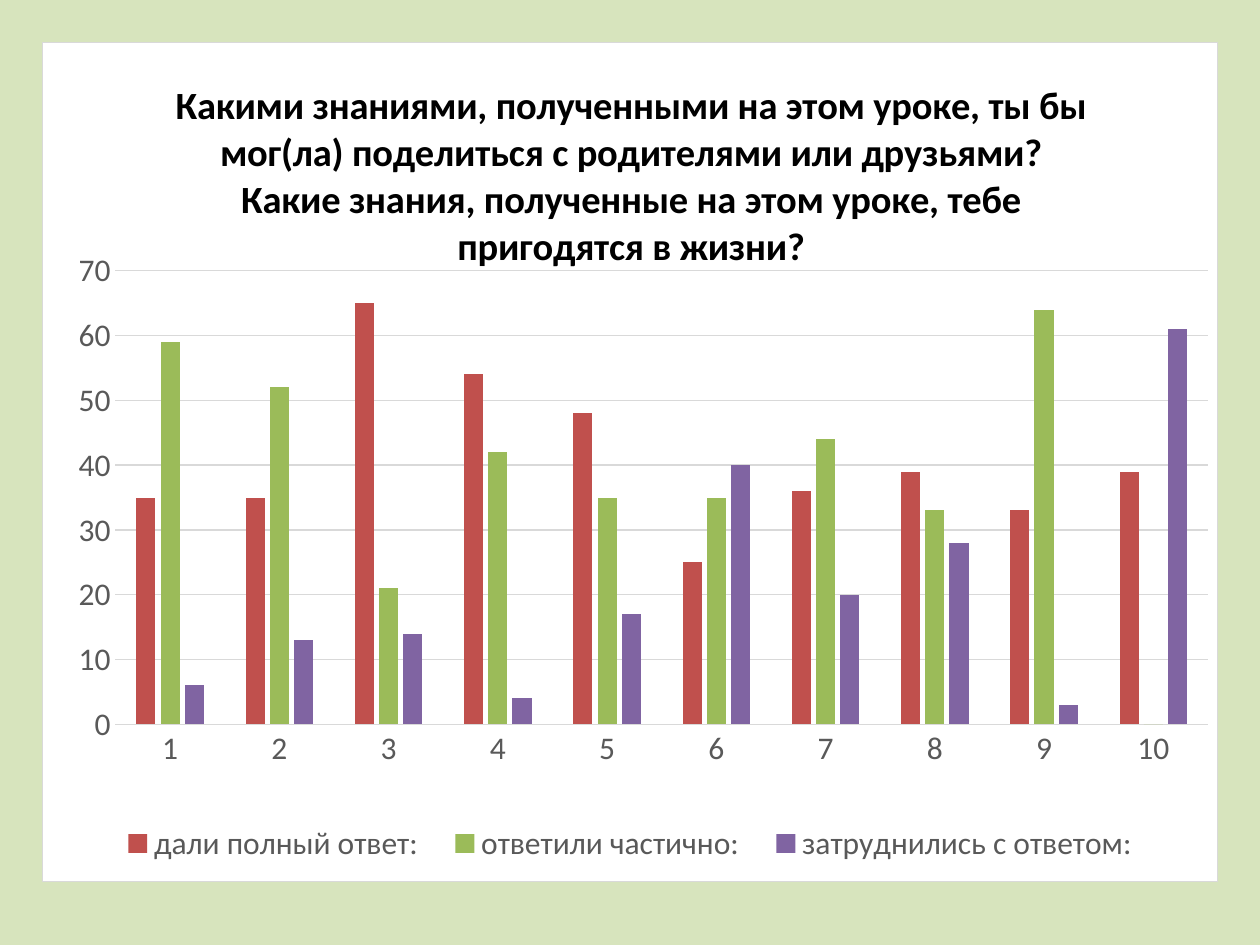
from lxml import etree
from pptx import Presentation
from pptx.chart.data import CategoryChartData
from pptx.dml.color import RGBColor as RGB
from pptx.enum.chart import XL_CHART_TYPE as CT, XL_LEGEND_POSITION as LP
from pptx.enum.chart import XL_TICK_MARK as Tick
from pptx.oxml import parse_xml
from pptx.oxml.ns import nsdecls, qn
from pptx.util import Pt

COLORS = {"bg": "D7E4BD", "panel": "FFFFFF", "rule": "D9D9D9",
          "label": "595959", "title": "000000"}
TITLE = [
    "Какими знаниями, полученными на этом уроке, ты бы мог(ла) "
    "поделиться с родителями или друзьями?",
    "Какие знания, полученные на этом уроке, тебе пригодятся в жизни?",
]
SERIES = [
    ("дали полный ответ:", "C0504D", (35, 35, 65, 54, 48, 25, 36, 39, 33, 39)),
    ("ответили частично:", "9BBB59", (59, 52, 21, 42, 35, 35, 44, 33, 64, 0)),
    ("затруднились с ответом:", "8064A2", (6, 13, 14, 4, 17, 40, 20, 28, 3, 61)),
]


def set_font(font, color, size, bold=False):
    for name, value in {"name": "Calibri", "size": Pt(size), "bold": bold}.items():
        setattr(font, name, value)
    font.color.rgb = RGB.from_string(COLORS[color])


def set_line(line):
    line.color.rgb = RGB.from_string(COLORS["rule"])
    line.width = Pt(0.75)


def set_layout(element, index, inner=False, **fractions):
    """Place a chart part by fractions of the chart box."""
    for old in element.findall(qn("c:layout")):
        element.remove(old)
    layout = parse_xml(f"<c:layout {nsdecls('c')}><c:manualLayout/></c:layout>")
    values = {"layoutTarget": "inner"} if inner else {}
    values.update(xMode="edge", yMode="edge", **fractions)
    for tag, value in values.items():
        etree.SubElement(layout[0], qn(f"c:{tag}")).set("val", str(value))
    element.insert(index, layout)


def style_title(chart):
    tf = chart.chart_title.text_frame
    for i, text in enumerate(TITLE):
        p = tf.paragraphs[0] if i == 0 else tf.add_paragraph()
        r = p.add_run()
        r.text = text
        set_font(r.font, "title", 22, True)
    chart.chart_title.include_in_layout = False
    set_layout(chart.chart_title._element, 1, x=0.11, y=0.04)


def style_axes(chart):
    for axis in (chart.category_axis, chart.value_axis):
        axis.major_tick_mark = axis.minor_tick_mark = Tick.NONE
        set_font(axis.tick_labels.font, "label", 18)
    set_line(chart.category_axis.format.line)
    value = chart.value_axis
    value.minimum_scale, value.maximum_scale, value.major_unit = 0, 70, 10
    value.format.line.fill.background()
    set_line(value.major_gridlines.format.line)


def style_legend(chart):
    chart.has_legend = True
    legend = chart.legend
    legend.position = LP.RIGHT
    legend.include_in_layout = False
    set_font(legend.font, "label", 18)
    set_layout(legend._element, 1, x=0.05, y=0.92, w=0.9, h=0.07)


def style_panel(chart):
    sp_pr = parse_xml(
        f'<c:spPr {nsdecls("c", "a")}>'
        f'<a:solidFill><a:srgbClr val="{COLORS["panel"]}"/></a:solidFill>'
        f'<a:ln w="{Pt(0.75)}"><a:solidFill><a:srgbClr val="{COLORS["rule"]}"/>'
        '</a:solidFill></a:ln></c:spPr>')
    chart._chartSpace.find(qn("c:chart")).addnext(sp_pr)


def add_answers_chart(s, left, top, width, height):
    data = CategoryChartData()
    data.categories = [str(n) for n in range(1, 11)]
    for name, _, values in SERIES:
        data.add_series(name, values)
    chart = s.shapes.add_chart(CT.COLUMN_CLUSTERED, Pt(left), Pt(top),
                               Pt(width), Pt(height), data).chart
    set_font(chart.font, "title", 18)

    # Columns
    plot = chart.plots[0]
    plot.gap_width, plot.overlap, plot.vary_by_categories = 219, -27, False
    for series, (_, color, _) in zip(plot.series, SERIES):
        series.format.fill.solid()
        series.format.fill.fore_color.rgb = RGB.from_string(color)
    plot_area = chart._chartSpace.find(qn("c:chart")).find(qn("c:plotArea"))
    set_layout(plot_area, 0, inner=True, x=0.062, y=0.272, w=0.93, h=0.541)

    # Surroundings
    for style in (style_title, style_axes, style_legend, style_panel):
        style(chart)


def main():
    prs = Presentation()
    prs.slide_width, prs.slide_height = Pt(720), Pt(540)
    s = prs.slides.add_slide(prs.slide_layouts[6])
    s.background.fill.solid()
    s.background.fill.fore_color.rgb = RGB.from_string(COLORS["bg"])
    add_answers_chart(s, 24, 24, 672, 480)
    prs.save("out.pptx")


if __name__ == "__main__":
    main()
